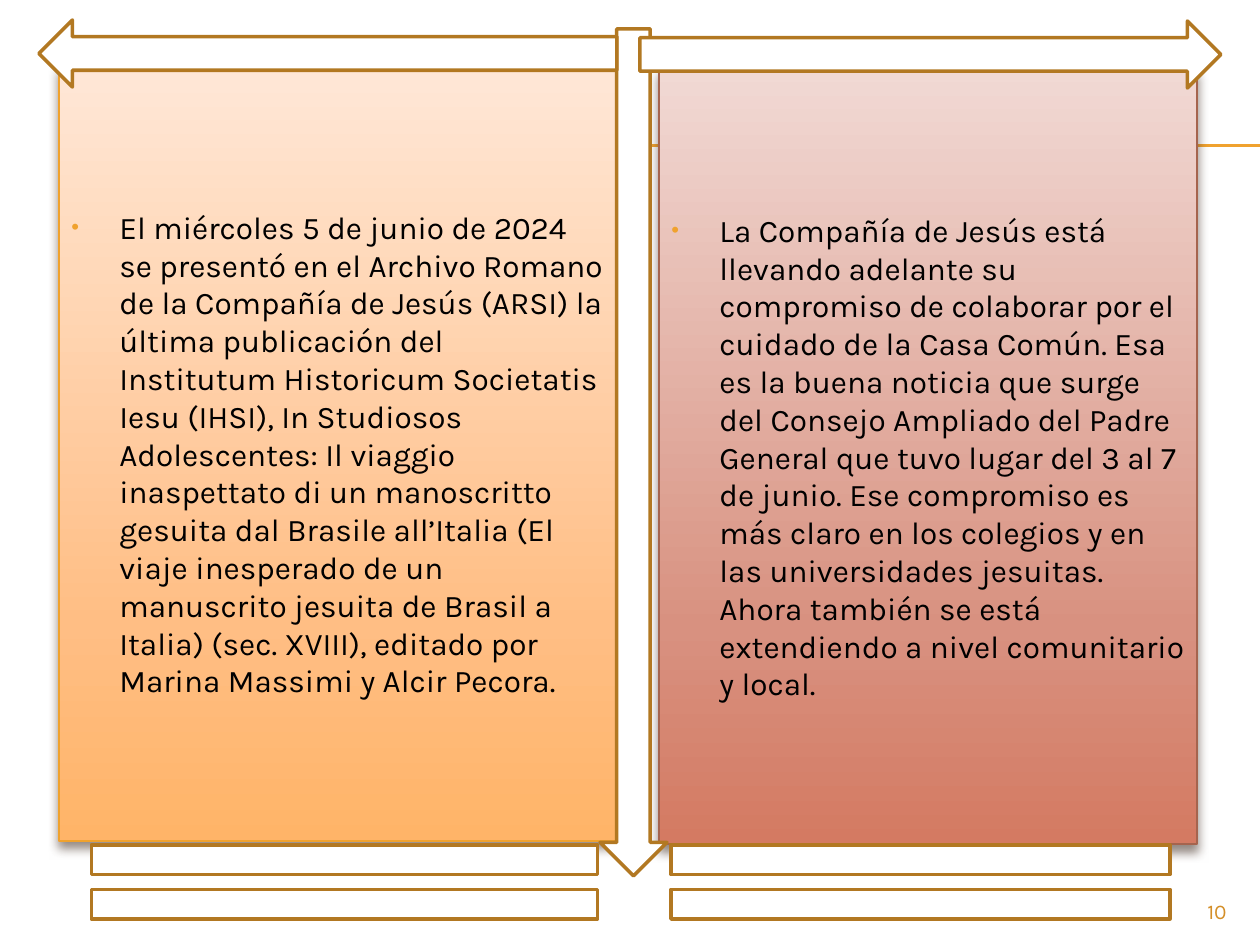
"""Build a two-column news slide framed by block arrows."""
from copy import deepcopy
from dataclasses import dataclass

from pptx import Presentation
from pptx import util as u
from pptx.dml.color import RGBColor
from pptx.enum import shapes, text
from pptx.oxml import parse_xml
from pptx.oxml.ns import nsdecls

SCALE = 914400 / 126


@dataclass(frozen=True)
class Theme:
    font: str = "Karla"
    ink: str = "000000"
    white: str = "FFFFFF"
    accent: str = "F0A22E"
    outline: str = "B27822"
    number: str = "D48F29"
    shadow: str = "4E3B30"
    body_size: int = 18
    number_size: int = 12
    outline_width: float = 2
    panel_width: float = 0.79
    rule_width: float = 0.75


@dataclass(frozen=True)
class Area:
    left: int
    top: int
    width: int
    height: int


@dataclass(frozen=True)
class Panel:
    area: Area
    gradient: tuple[str, str, str]
    border: str
    words: str


@dataclass(frozen=True)
class Symbol:
    kind: shapes.MSO_SHAPE
    area: Area


THEME = Theme()
STOPS = (0, 0.72, 1)
RULE_LEFT, RULE_RIGHT, RULE_TOPS = 71, 1260, (145, 146)

PANELS = (
    Panel(
        Area(59, 66, 557, 775), ("FFE7D7", "FFBE84", "FFB468"), THEME.accent,
        "El miércoles 5 de junio de 2024 se presentó en el Archivo Romano de la "
        "Compañía de Jesús (ARSI) la última publicación del Institutum Historicum "
        "Societatis Iesu (IHSI), In Studiosos Adolescentes: Il viaggio inaspettato "
        "di un manoscritto gesuita dal Brasile all’Italia (El viaje inesperado de un "
        "manuscrito jesuita de Brasil a Italia) (sec. XVIII), editado por Marina "
        "Massimi y Alcir Pecora.",
    ),
    Panel(
        Area(659, 69, 538, 775), ("F1D9D4", "D89180", "D47A62"), "A5644E",
        "La Compañía de Jesús está llevando adelante su compromiso de colaborar por "
        "el cuidado de la Casa Común. Esa es la buena noticia que surge del Consejo "
        "Ampliado del Padre General que tuvo lugar del 3 al 7 de junio. Ese "
        "compromiso es más claro en los colegios y en las universidades jesuitas. "
        "Ahora también se está extendiendo a nivel comunitario y local.",
    ),
)

SYMBOLS = (
    Symbol(shapes.MSO_SHAPE.DOWN_ARROW, Area(600, 29, 67, 847)),
    Symbol(shapes.MSO_SHAPE.RIGHT_ARROW, Area(640, 21, 581, 67)),
    Symbol(shapes.MSO_SHAPE.LEFT_ARROW, Area(39, 20, 578, 67)),
    Symbol(shapes.MSO_SHAPE.MATH_EQUAL, Area(0, 819, 689, 126)),
    Symbol(shapes.MSO_SHAPE.MATH_EQUAL, Area(581, 819, 679, 126)),
)


def px(length: int) -> u.Emu:
    """Convert pixels to EMU."""
    return u.Emu(round(length * SCALE))


def place(area: Area) -> tuple[u.Emu, ...]:
    """Return the position and size of an area in EMU."""
    return tuple(map(px, (area.left, area.top, area.width, area.height)))


def set_line(shape, color: str, width: float) -> None:
    """Give a shape or connector a solid line."""
    shape.line.color.rgb = RGBColor.from_string(color)
    shape.line.width = u.Pt(width)


def write(para, words: str, *, size: int, color: str, align=text.PP_ALIGN.LEFT) -> None:
    """Write one formatted span into a paragraph."""
    para.alignment = align
    span = para.add_run()
    span.text = words
    span.font.name = THEME.font
    span.font.size = u.Pt(size)
    span.font.color.rgb = RGBColor.from_string(color)


def add_bullet(para) -> None:
    """Give a paragraph a hanging coloured bullet."""
    props = para._p.get_or_add_pPr()
    props.set("marL", str(px(48)))
    props.set("indent", str(px(-48)))
    for markup in (
        f'<a:buClr {nsdecls("a")}><a:srgbClr val="{THEME.accent}"/></a:buClr>',
        f'<a:buSzPct {nsdecls("a")} val="70000"/>',
        f'<a:buFont {nsdecls("a")} typeface="Arial"/>',
        f'<a:buChar {nsdecls("a")} char="•"/>',
    ):
        props.append(parse_xml(markup))


def fill_gradient(shape, colors: tuple[str, ...]) -> None:
    """Fill a shape with a three-stop gradient running downwards."""
    shape.fill.gradient()
    shape.fill.gradient_angle = 270
    first = shape._element.spPr.find(".//{*}gs")
    first.addnext(deepcopy(first))
    for stop, position, color in zip(shape.fill.gradient_stops, STOPS, colors):
        stop.position = position
        stop.color.rgb = RGBColor.from_string(color)


def add_shadow(shape) -> None:
    """Give a shape a soft shadow below it."""
    shape.shadow.inherit = False
    shape._element.spPr.find("{*}effectLst").append(parse_xml(
        f'<a:outerShdw {nsdecls("a")} blurRad="{u.Pt(6)}" dist="{u.Pt(4)}" '
        f'dir="5400000" rotWithShape="0"><a:srgbClr val="{THEME.shadow}">'
        '<a:alpha val="60000"/></a:srgbClr></a:outerShdw>'
    ))


def draw_rule(page, top: int) -> None:
    """Draw one thin horizontal rule."""
    rule = page.shapes.add_connector(
        shapes.MSO_CONNECTOR.STRAIGHT, px(RULE_LEFT), px(top), px(RULE_RIGHT), px(top)
    )
    set_line(rule, THEME.accent, THEME.rule_width)
    rule._element.spPr.append(parse_xml(f'<a:effectLst {nsdecls("a")}/>'))


def draw_panel(page, panel: Panel) -> None:
    """Draw a gradient panel with its bulleted text."""
    box = page.shapes.add_shape(shapes.MSO_SHAPE.RECTANGLE, *place(panel.area))
    fill_gradient(box, panel.gradient)
    set_line(box, panel.border, THEME.panel_width)
    add_shadow(box)
    frame = box.text_frame
    frame.word_wrap = True
    frame.vertical_anchor = text.MSO_ANCHOR.MIDDLE
    para = frame.paragraphs[0]
    add_bullet(para)
    write(para, panel.words, size=THEME.body_size, color=THEME.ink)


def draw_symbol(page, symbol: Symbol) -> None:
    """Draw a white outlined symbol."""
    shape = page.shapes.add_shape(symbol.kind, *place(symbol.area))
    shape.shadow.inherit = False
    shape.fill.solid()
    shape.fill.fore_color.rgb = RGBColor.from_string(THEME.white)
    set_line(shape, THEME.outline, THEME.outline_width)


def draw_number(page, words: str) -> None:
    """Write the page number at the lower right."""
    box = page.shapes.add_textbox(*place(Area(1134, 892, 105, 34)))
    box.text_frame.word_wrap = True
    write(box.text_frame.paragraphs[0], words, size=THEME.number_size,
          color=THEME.number, align=text.PP_ALIGN.RIGHT)


def main() -> None:
    """Build and save the deck."""
    deck = Presentation()
    deck.slide_width, deck.slide_height = px(1260), px(945)
    page = deck.slides.add_slide(deck.slide_layouts[6])
    for top in RULE_TOPS:
        draw_rule(page, top)
    for panel in PANELS:
        draw_panel(page, panel)
    for symbol in SYMBOLS:
        draw_symbol(page, symbol)
    draw_number(page, "10")
    deck.save("out.pptx")


if __name__ == "__main__":
    main()
